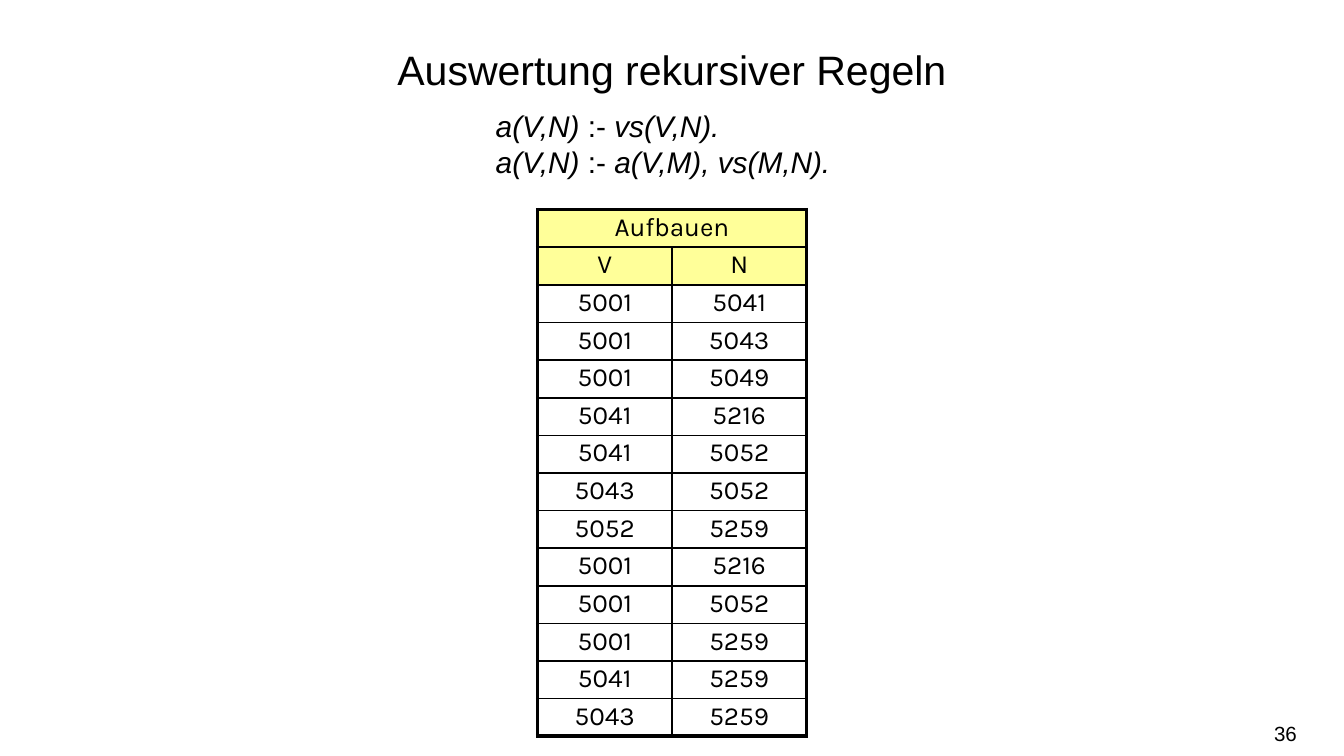
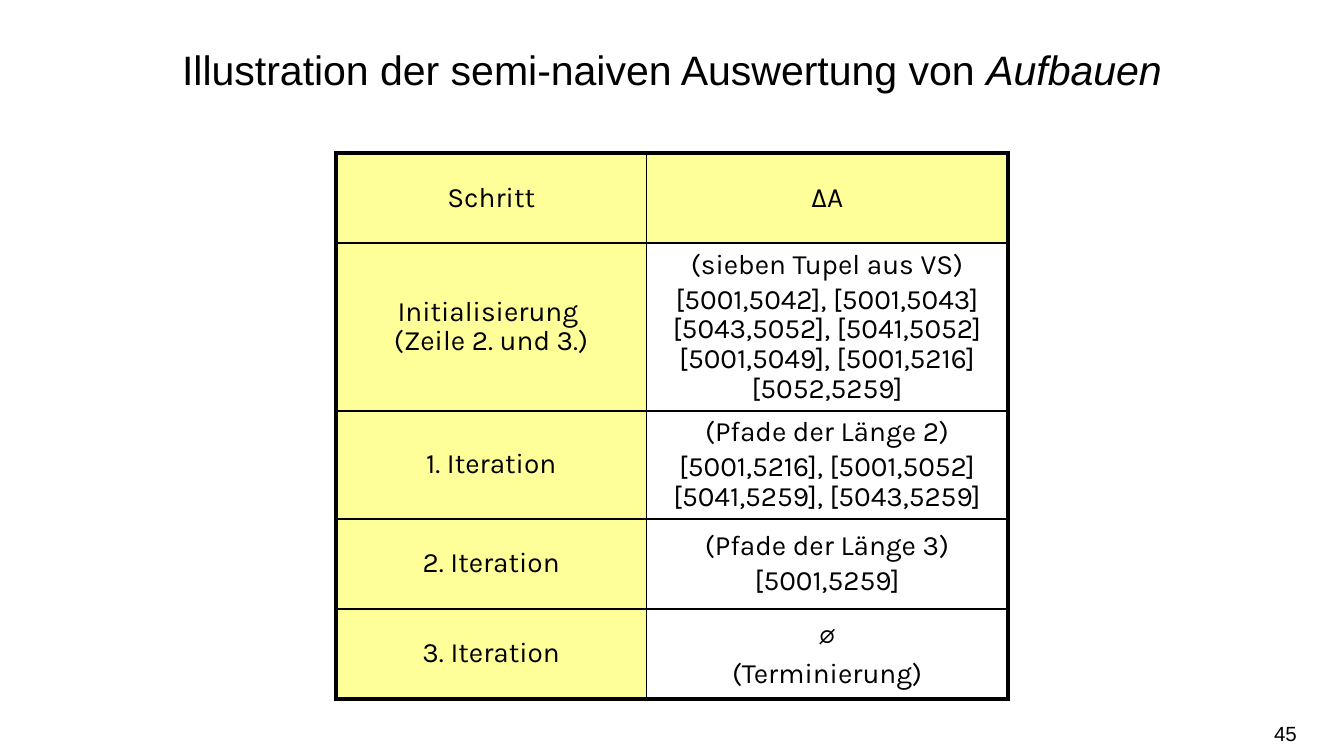
import pptx
import pptx.util
import pptx.dml.color
import pptx.enum.text
import pptx.oxml

Inches, Pt = pptx.util.Inches, pptx.util.Pt
ALIGN, ANCHOR = pptx.enum.text.PP_ALIGN, pptx.enum.text.MSO_ANCHOR


class Theme:
    ink = pptx.dml.color.RGBColor(0, 0, 0)
    head = pptx.dml.color.RGBColor(0xFF, 0xFF, 0x99)
    sans, cell = "Arial", "Karla"
    title, rule, page = 22, 16, 11
    thick, thin = 2.25, 1


def label(slide, box, lines, size, align, anchor, space=1.0, indent=0, side=0.1):
    frame = slide.shapes.add_textbox(*map(Inches, box)).text_frame
    frame.word_wrap = True
    frame.vertical_anchor = anchor
    frame.margin_left = frame.margin_right = Inches(side)
    for i, line in enumerate(lines):
        para = frame.add_paragraph() if i else frame.paragraphs[0]
        para.alignment = align
        para.line_spacing = space
        if indent:
            para._p.get_or_add_pPr().set("marL", str(Inches(indent)))
        para.font.name, para.font.size = Theme.sans, Pt(size)
        para.font.color.rgb = Theme.ink
        for text, slant in line:
            run = para.add_run()
            run.text = text
            run.font.italic = slant


def grid(slide, left, top, cols, highs, rows, size, anchor, tinted):
    table = slide.shapes.add_table(
        len(rows), len(cols), Inches(left), Inches(top),
        Inches(sum(cols)), Inches(sum(highs))).table
    table.first_row = table.horz_banding = False
    for col, wide in zip(table.columns, cols):
        col.width = Inches(wide)
    for r, row in enumerate(rows):
        table.rows[r].height = Inches(highs[r])
        for c, text in enumerate(row):
            cell = table.cell(r, c)
            cell.margin_left = cell.margin_right = Inches(0.07)
            cell.margin_top = cell.margin_bottom = Pt(2.5)
            cell.vertical_anchor = anchor
            outer = {"L": c == 0, "R": c == len(cols) - 1 or row[c + 1] is None,
                     "T": r == 0, "B": r == len(rows) - 1}
            for edge, bold in outer.items():
                width = Pt(Theme.thick if bold else Theme.thin)
                cell._tc.get_or_add_tcPr().append(pptx.oxml.parse_xml(
                    f'<a:ln{edge} xmlns:a="http://schemas.openxmlformats.org/drawingml/2006/main" '
                    f'w="{width}"><a:solidFill><a:srgbClr val="{Theme.ink}"/>'
                    f'</a:solidFill></a:ln{edge}>'))
            if tinted(r, c):
                cell.fill.solid()
                cell.fill.fore_color.rgb = Theme.head
            else:
                cell.fill.background()
            if text is None:
                table.cell(r, c - 1).merge(cell)
                continue
            cell.text_frame.text = text
            for i, para in enumerate(cell.text_frame.paragraphs):
                para.alignment = ALIGN.CENTER
                para.line_spacing = 0.9
                if i:
                    para.space_before = Pt(size * 0.2)
                para.font.name, para.font.size = Theme.cell, Pt(size)
                para.font.color.rgb = Theme.ink
    return table


deck = pptx.Presentation()
deck.slide_width = Inches(10)
deck.slide_height = deck.slide_width * 9 // 16

heads = [
    ([("Auswertung rekursiver Regeln", False)], "36"),
    ([("Illustration der semi-naiven Auswertung von ", False), ("Aufbauen", True)], "45"),
]
for title, page in heads:
    slide = deck.slides.add_slide(deck.slide_layouts[6])
    label(slide, (0, 0, 10, 0.94), [title], Theme.title, ALIGN.CENTER, ANCHOR.MIDDLE, 1.25)
    label(slide, (7.41, 5.31, 2.24, 0.3), [[(page, False)]], Theme.page,
          ALIGN.RIGHT, ANCHOR.MIDDLE, side=0)
rules, steps = deck.slides

label(rules, (1.25, 0.75, 7.5, 0.69), [
    [("a(V,N) ", True), (":- ", False), ("vs(V,N).", True)],
    [("a(V,N) ", True), (":-", False), (" a(V,M), vs(M,N).", True)],
], Theme.rule, ALIGN.LEFT, ANCHOR.TOP, indent=2.34)

pairs = [
    ("Aufbauen", None), ("V", "N"),
    ("5001", "5041"), ("5001", "5043"), ("5001", "5049"), ("5041", "5216"),
    ("5041", "5052"), ("5043", "5052"), ("5052", "5259"), ("5001", "5216"),
    ("5001", "5052"), ("5001", "5259"), ("5041", "5259"), ("5043", "5259"),
]
grid(rules, 4, 1.56, [1, 1], [0.28] * len(pairs), pairs, 14, ANCHOR.TOP,
     lambda r, c: r < 2)

loops = [
    ("Schritt", "ΔA"),
    ("Initialisierung \v(Zeile 2. und 3.)",
     "(sieben Tupel aus VS)\n[5001,5042], [5001,5043] [5043,5052], [5041,5052] "
     "[5001,5049], [5001,5216] [5052,5259]"),
    ("1. Iteration",
     "(Pfade der Länge 2)\n[5001,5216], [5001,5052] [5041,5259], [5043,5259]"),
    ("2. Iteration", "(Pfade der Länge 3)\n[5001,5259]"),
    ("3. Iteration", "∅\n(Terminierung)"),
]
table = grid(steps, 2.5, 1.14, [2.31, 2.69], [0.67, 1.25, 0.8, 0.67, 0.67], loops, 15,
             ANCHOR.MIDDLE, lambda r, c: r == 0 or c == 0)
table.cell(4, 1).text_frame.paragraphs[0].font.size = Pt(18)

deck.save("out.pptx")
